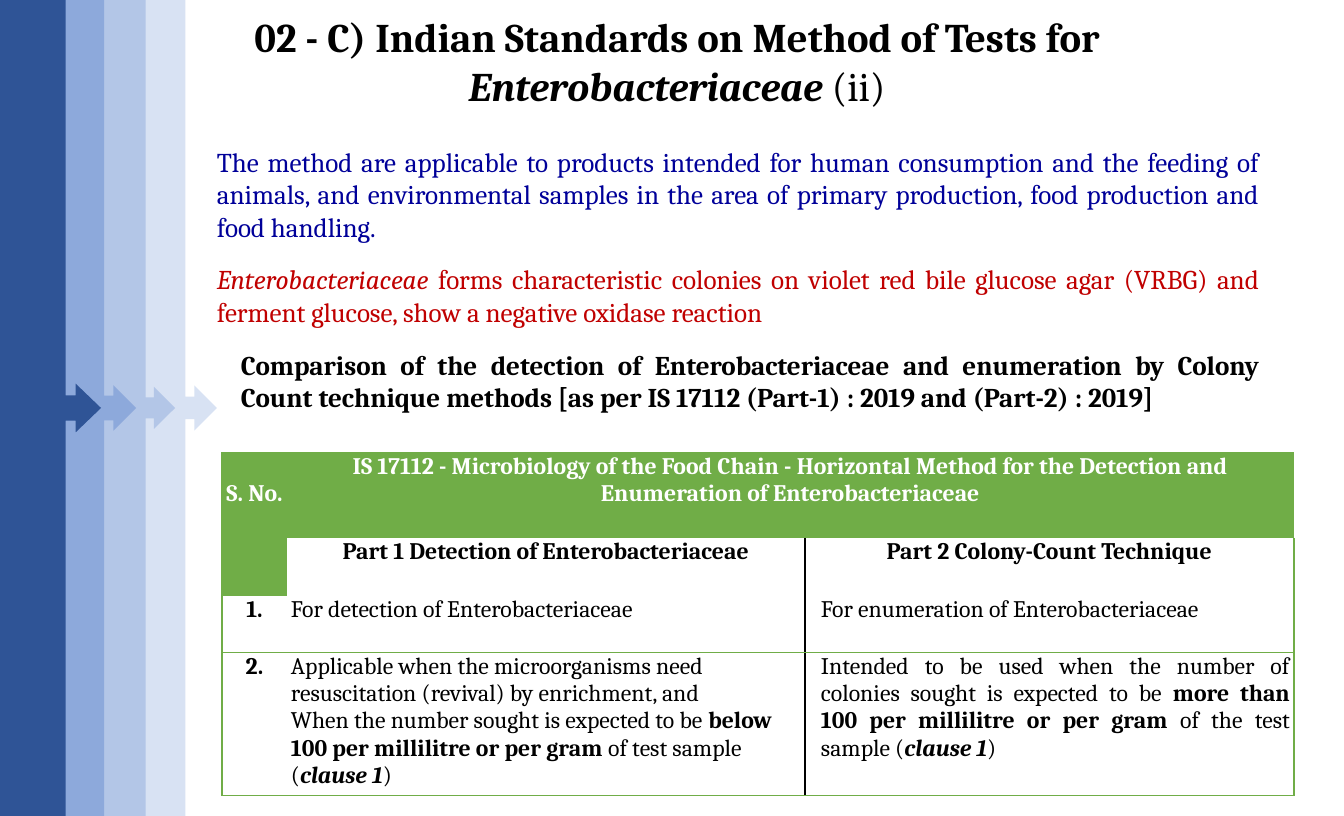
import pptx
import pptx.util
import pptx.dml.color
import pptx.enum.shapes
import pptx.enum.text
import pptx.oxml
import pptx.oxml.ns

PX = 914400 // 122
COLORS = {
    "white": "FFFFFF", "black": "000000", "navy": "000099", "red": "C00000",
    "green": "70AD47", "blue1": "2F5496", "blue2": "8DA9DB", "blue3": "B3C6E7",
    "blue4": "D8E2F3",
}
ALIGN = pptx.enum.text.PP_ALIGN
NO_STYLE = "{2D5ABB26-0587-4C30-8999-92F81FD0307C}"


def add_runs(p, runs, size, color, align):
    """Add (text, style) runs, where style may hold b for bold and i for italic."""
    p.alignment = align
    for text, style in runs:
        r = p.add_run()
        r.text = text
        r.font.name = "Cambria"
        r.font.size = pptx.util.Pt(size)
        r.font.bold = "b" in style
        r.font.italic = "i" in style
        r.font.color.rgb = pptx.dml.color.RGBColor.from_string(COLORS[color])


def add_border(cell, side, color, width):
    """Draw one cell edge; side is L, R, T or B."""
    cell._tc.get_or_add_tcPr().append(pptx.oxml.parse_xml(
        f'<a:ln{side} {pptx.oxml.ns.nsdecls("a")} w="{pptx.util.Pt(width)}"><a:solidFill>'
        f'<a:srgbClr val="{COLORS[color]}"/></a:solidFill></a:ln{side}>'))


prs = pptx.Presentation()
prs.slide_width, prs.slide_height = 1344 * PX, 816 * PX
s = prs.slides.add_slide(prs.slide_layouts[5])

# Title
title = s.shapes.title
title.left, title.top, title.width, title.height = (v * PX for v in (210, 6, 934, 111))
tf = title.text_frame
tf.word_wrap = True
tf.auto_size = pptx.enum.text.MSO_AUTO_SIZE.NONE
tf.vertical_anchor = pptx.enum.text.MSO_ANCHOR.TOP
add_runs(tf.paragraphs[0], [
    ("02 - C) Indian Standards on Method of Tests for ", "b"),
    ("Enterobacteriaceae ", "bi"), ("(ii)", "")], 24, "black", ALIGN.CENTER)

# Scope paragraphs
box = s.shapes.add_textbox(205 * PX, 139 * PX, 1067 * PX, 293 * PX)
tf = box.text_frame
tf.word_wrap = True
scope = [
    ("navy", 0, [("The method are applicable to products intended for human consumption and the "
                  "feeding of animals, and environmental samples in the area of primary "
                  "production, food production and food handling.", "")]),
    ("red", 0, [("Enterobacteriaceae", "i"),
                (" forms characteristic colonies on violet red bile glucose agar (VRBG) and "
                 "ferment glucose, show a negative oxidase reaction", "")]),
    ("black", 24, [("Comparison of the detection of Enterobacteriaceae and enumeration by Colony "
                    "Count technique methods [as per IS 17112 (Part-1) : 2019 and (Part-2) : "
                    "2019]", "b")]),
]
for i, (color, indent, runs) in enumerate(scope):
    p = tf.add_paragraph() if i else tf.paragraphs[0]
    add_runs(p, runs, 16, color, ALIGN.JUSTIFY)
    p.space_before = pptx.util.Pt(12 if i else 0)
    if indent:
        p._p.get_or_add_pPr().set("marL", str(indent * PX))

# Comparison table
col_widths, row_heights = (65, 518, 489), (85, 58, 57, 142)
frame = s.shapes.add_table(4, 3, 222 * PX, 453 * PX, sum(col_widths) * PX, sum(row_heights) * PX)
table = frame.table
table.first_row = table.horz_banding = False
table._tbl.tblPr.find(pptx.oxml.ns.qn("a:tableStyleId")).text = NO_STYLE
for col, width in zip(table.columns, col_widths):
    col.width = width * PX
for row, height in zip(table.rows, row_heights):
    row.height = height * PX
table.cell(0, 0).merge(table.cell(1, 0))
table.cell(0, 1).merge(table.cell(0, 2))

CENTER, LEFT, JUSTIFY = ALIGN.CENTER, ALIGN.LEFT, ALIGN.JUSTIFY
contents = {
    (0, 0): (CENTER, [[("S. No.", "b")]]),
    (0, 1): (CENTER, [[("IS 17112 - Microbiology of the Food Chain - Horizontal Method for the "
                        "Detection and Enumeration of Enterobacteriaceae", "b")]]),
    (1, 1): (CENTER, [[("Part 1 Detection of Enterobacteriaceae", "b")]]),
    (1, 2): (CENTER, [[("Part 2 Colony-Count Technique", "b")]]),
    (2, 0): (CENTER, [[("1.", "b")]]),
    (2, 1): (JUSTIFY, [[("For detection of Enterobacteriaceae", "")]]),
    (2, 2): (JUSTIFY, [[("For enumeration of Enterobacteriaceae", "")]]),
    (3, 0): (CENTER, [[("2.", "b")]]),
    (3, 1): (LEFT, [
        [("Applicable when the microorganisms need resuscitation (revival) by enrichment, and", "")],
        [("When the number sought is expected to be ", ""),
         ("below 100 per millilitre or per gram", "b"), (" of test sample (", ""),
         ("clause 1", "bi"), (")", "")]]),
    (3, 2): (JUSTIFY, [
        [("Intended to be used when the number of colonies sought is expected to be ", ""),
         ("more than 100 per millilitre or per gram", "b"), (" of the test sample (", ""),
         ("clause 1", "bi"), (")", "")]]),
}
for row in range(4):
    for col in range(3):
        cell = table.cell(row, col)
        header = row == 0 or (row, col) == (1, 0)
        cell.margin_left = cell.margin_right = 4 * PX
        cell.margin_top = 27 * PX if (row, col) == (0, 0) else 0
        cell.margin_bottom = 0
        if col == 0:
            add_border(cell, "L", "green", 0.75)
        elif col == 2 and row:
            add_border(cell, "L", "black", 1)
        if col == 2:
            add_border(cell, "R", "green", 0.75)
        elif col == 1 and row:
            add_border(cell, "R", "black", 1)
        if row in (0, 3):
            add_border(cell, "T", "green", 0.75)
        if row in (2, 3):
            add_border(cell, "B", "green", 0.75)
        if header:
            cell.fill.solid()
            cell.fill.fore_color.rgb = pptx.dml.color.RGBColor.from_string(COLORS["green"])
        else:
            cell.fill.background()
        if (row, col) not in contents:
            continue
        align, paragraphs = contents[row, col]
        for i, runs in enumerate(paragraphs):
            p = cell.text_frame.add_paragraph() if i else cell.text_frame.paragraphs[0]
            add_runs(p, runs, 14, "white" if header else "black", align)
            if col == 2 and row > 1:
                p._p.get_or_add_pPr().set("marL", str(12 * PX))

# Side bands, the lightest at the back
bands = [
    (127, 90, "blue4", (0.25, 0.25, 0.25, 0.65)),
    (91, 84, "blue3", (0.25, 0.25, 0.25, 0.65)),
    (45, 91, "blue2", (0.27, 0.25, 0.25, 0.65)),
    (0, 101, "blue1", (0.25, 0.24, 0.25, 0.65)),
]
for left, width, color, adjustments in bands:
    band = s.shapes.add_shape(pptx.enum.shapes.MSO_SHAPE.RIGHT_ARROW_CALLOUT,
                              left * PX, 0, width * PX, 816 * PX)
    for i, value in enumerate(adjustments):
        band.adjustments[i] = value
    band.shadow.inherit = False
    band.fill.solid()
    band.fill.fore_color.rgb = pptx.dml.color.RGBColor.from_string(COLORS[color])
    band.line.fill.background()

prs.save("out.pptx")
